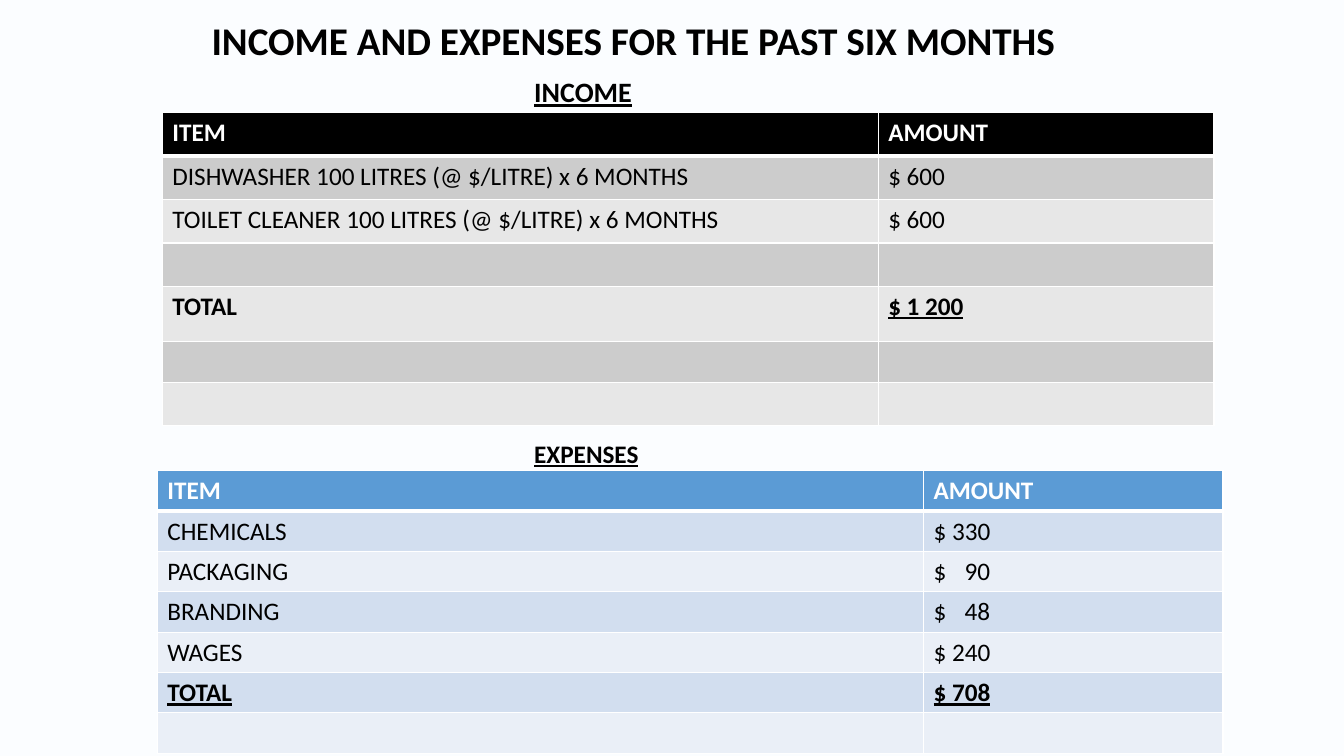
from lxml import etree
from pptx import Presentation
from pptx.dml.color import RGBColor
from pptx.oxml.ns import qn
from pptx.util import Inches, Pt

FONT = "Calibri"
COLORS = {
    "page": "FBFDFF", "ink": "000000", "white": "FFFFFF",
    "black": "000000", "gray": "CCCCCC", "pale": "E7E7E7",
    "blue": "5B9BD5", "sky": "D2DEEF", "mist": "EAEFF7",
}
INCOME = [
    ("ITEM", "AMOUNT"),
    ("DISHWASHER 100 LITRES (@ $/LITRE) x 6 MONTHS", "$ 600"),
    ("TOILET CLEANER 100 LITRES (@ $/LITRE) x 6 MONTHS", "$ 600"),
    ("", ""),
    ("TOTAL", "$ 1 200"),
    ("", ""),
    ("", ""),
]
COSTS = [
    ("ITEM", "AMOUNT"),
    ("CHEMICALS", "$ 330"),
    ("PACKAGING", "$\t90"),
    ("BRANDING", "$\t48"),
    ("WAGES", "$ 240"),
    ("TOTAL", "$ 708"),
    ("", ""),
]


def rgb(name):
    """Return the named colour."""
    return RGBColor.from_string(COLORS[name])


def style(para, size, color, bold=False, line=False):
    """Format every run of a paragraph."""
    for run in para.runs:
        font = run.font
        font.name, font.size = FONT, Pt(size)
        font.bold, font.underline = bold, line
        font.color.rgb = rgb(color)


def label(slide, box, text, size, line=False):
    """Add a bold heading in the given box."""
    frame = slide.shapes.add_textbox(*map(Inches, box)).text_frame
    frame.word_wrap = True
    frame.text = text
    style(frame.paragraphs[0], size, "ink", True, line)


def border(cell, side, width):
    """Draw one white cell border."""
    edge = etree.SubElement(cell._tc.get_or_add_tcPr(), qn(f"a:ln{side}"), w=str(Pt(width)))
    fill = etree.SubElement(edge, qn("a:solidFill"))
    etree.SubElement(fill, qn("a:srgbClr"), val=COLORS["white"])


def align(para):
    """Set a right tab stop where the amounts end."""
    tabs = etree.SubElement(para._p.get_or_add_pPr(), qn("a:tabLst"))
    etree.SubElement(tabs, qn("a:tab"), pos=str(Inches(0.56)), algn="r")


def ledger(slide, left, top, widths, heights, rows, fills, lined):
    """Add a banded table; lined holds the total row's underlined columns."""
    box = map(Inches, (left, top, sum(widths), sum(heights)))
    table = slide.shapes.add_table(len(rows), len(widths), *box).table
    for col, width in zip(table.columns, widths):
        col.width = Inches(width)
    for i, (row, height) in enumerate(zip(rows, heights)):
        table.rows[i].height = Inches(height)
        head, total = i == 0, row[0] == "TOTAL"
        shade = fills[0] if head else fills[2 - i % 2]
        for j, text in enumerate(row):
            cell = table.cell(i, j)
            for side in "LRTB" if head else "LRB":
                border(cell, side, 3 if head and side == "B" else 1)
            cell.fill.solid()
            cell.fill.fore_color.rgb = rgb(shade)
            para = cell.text_frame.paragraphs[0]
            para.text = text
            style(para, 18, "white" if head else "ink", head or total, total and j in lined)
            if "\t" in text:
                align(para)


def main():
    """Build the slide and save it."""
    deck = Presentation()
    deck.slide_width, deck.slide_height = Inches(13.33), Inches(7.5)
    slide = deck.slides.add_slide(deck.slide_layouts[6])
    fill = slide.background.fill
    fill.solid()
    fill.fore_color.rgb = rgb("page")
    ledger(slide, 1.61, 1.12, (7.1, 3.33), [0.43] * 4 + [0.55, 0.39, 0.43],
           INCOME, ("black", "gray", "pale"), (1,))
    label(slide, (2, 0.11, 8.98, 0.57), "INCOME AND EXPENSES FOR THE PAST SIX MONTHS", 28)
    label(slide, (5.2, 0.69, 4.77, 0.44), "INCOME", 20, True)
    ledger(slide, 1.56, 4.67, (7.6, 2.97), [0.4] * 7,
           COSTS, ("blue", "sky", "mist"), (0, 1))
    label(slide, (5.2, 4.3, 3.07, 0.4), "EXPENSES", 18, True)
    deck.save("out.pptx")


if __name__ == "__main__":
    main()
